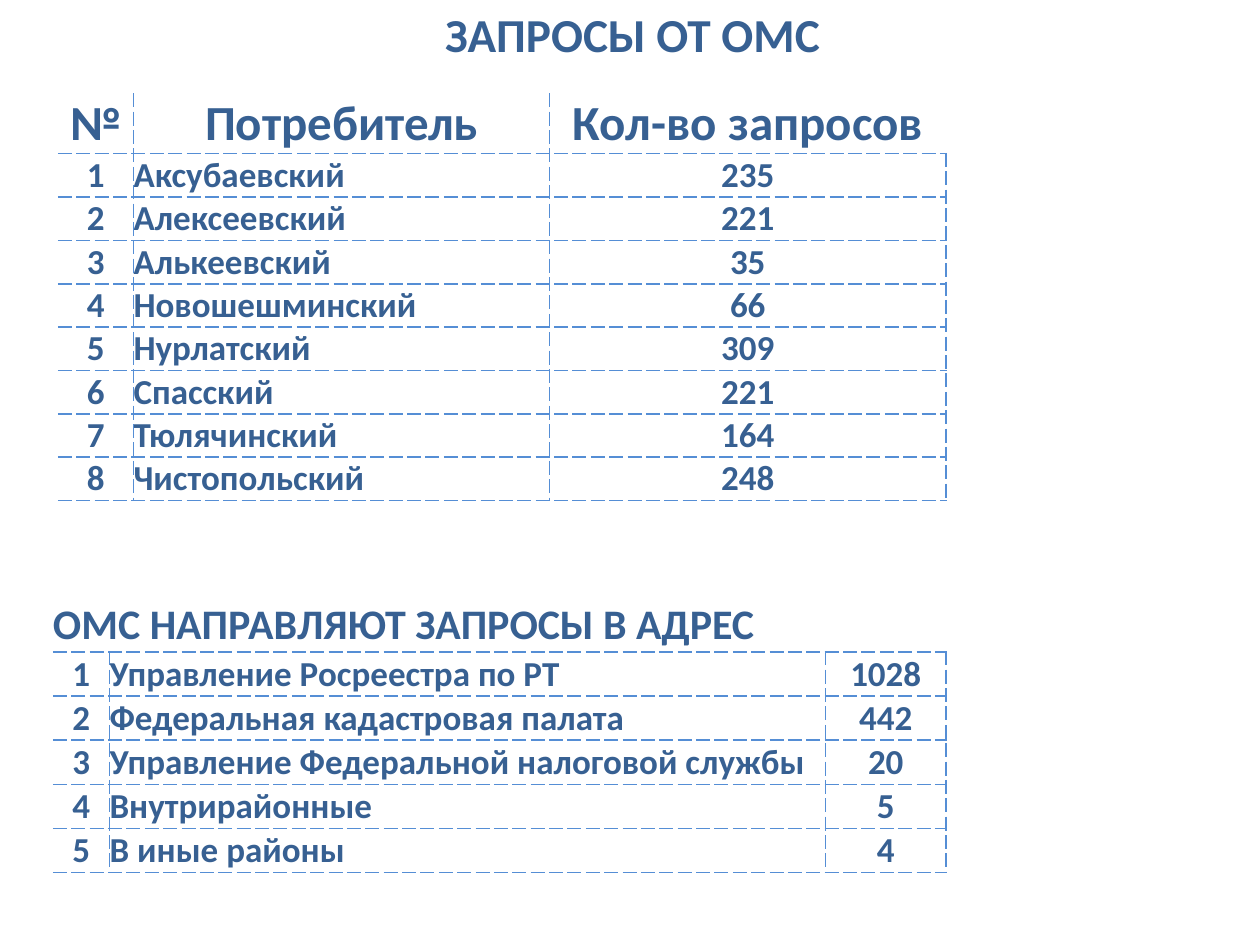
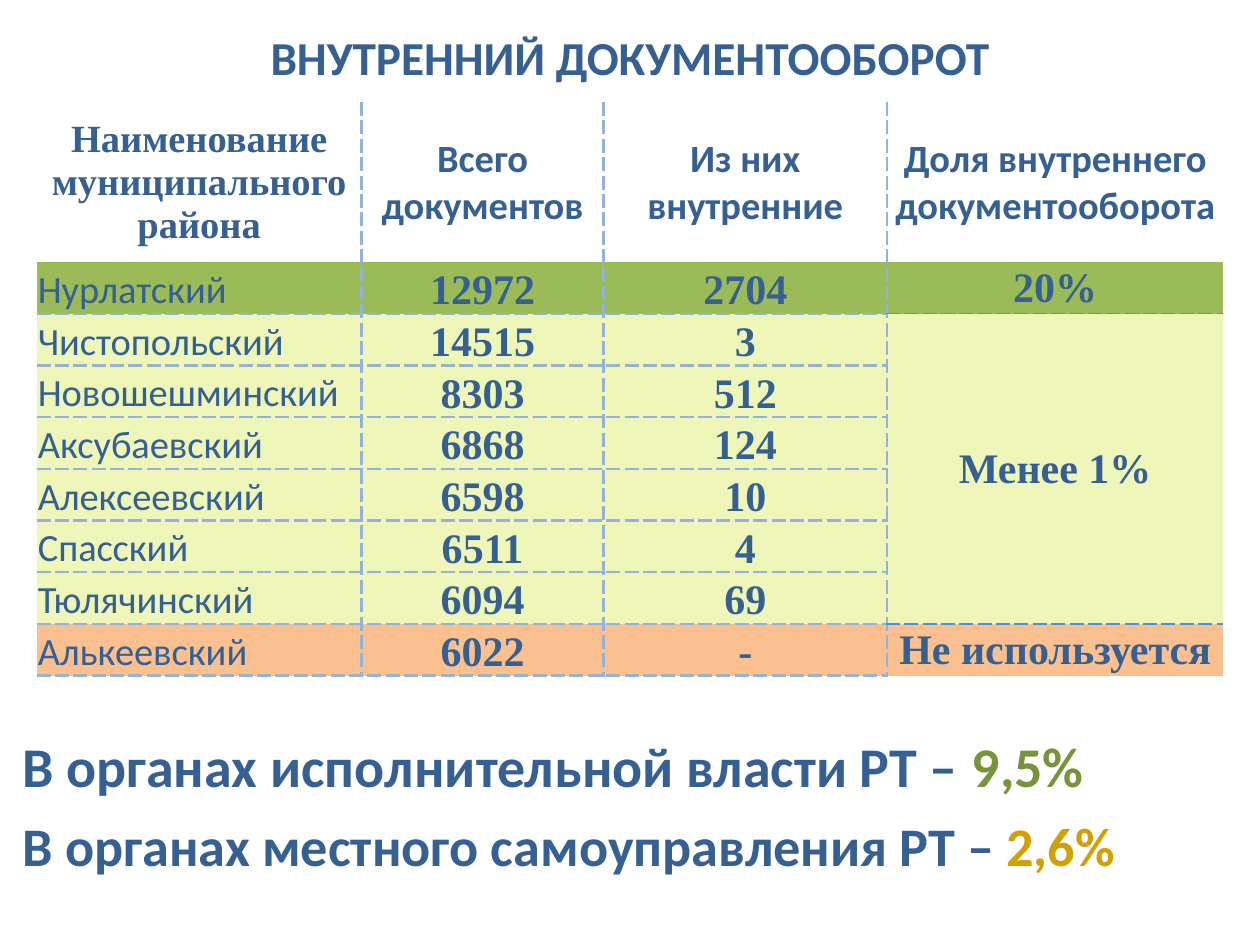
from dataclasses import dataclass

from lxml import etree
from pptx import Presentation
from pptx.dml.color import RGBColor
from pptx.enum.text import MSO_ANCHOR, MSO_AUTO_SIZE, PP_ALIGN
from pptx.oxml.ns import qn
from pptx.util import Inches, Pt

LEFT, CENTER, JUSTIFY = PP_ALIGN.LEFT, PP_ALIGN.CENTER, PP_ALIGN.JUSTIFY
TOP, MIDDLE, BOTTOM = MSO_ANCHOR.TOP, MSO_ANCHOR.MIDDLE, MSO_ANCHOR.BOTTOM
NO_AUTOFIT = MSO_AUTO_SIZE.NONE


@dataclass(frozen=True)
class Theme:
    sans: str = "Calibri"
    serif: str = "Times New Roman"
    text: str = "376092"
    name: str = "366092"
    line: str = "558ED5"
    soft_line: str = "95B3D7"
    white: str = "FFFFFF"
    high: str = "9BBB59"
    low: str = "EEF7B9"
    unused: str = "FAC090"
    green: str = "77933C"
    gold: str = "D2A000"
    title_size: int = 27
    header_size: int = 28
    subtitle_size: int = 24
    row_size: int = 20
    label_size: int = 22
    figure_size: int = 24


theme = Theme()


def add_run(paragraph, text, size, color=theme.text, font=theme.sans, bold=True):
    run = paragraph.add_run()
    run.text = text
    run.font.size = Pt(size)
    run.font.name = font
    run.font.bold = bold
    run.font.color.rgb = RGBColor.from_string(color)


def format_cell(cell, align, anchor, inset, fill, borders):
    cell.vertical_anchor = anchor
    cell.margin_left = cell.margin_right = cell.margin_top = Inches(inset)
    cell.margin_bottom = 0
    cell.text_frame.paragraphs[0].alignment = align
    if fill:
        cell.fill.solid()
        cell.fill.fore_color.rgb = RGBColor.from_string(fill)
    else:
        cell.fill.background()
    properties = cell._tc.get_or_add_tcPr()
    for index, side in enumerate("LRTB"):
        line = etree.Element(qn(f"a:ln{side}"))
        properties.insert(index, line)
        if side in borders:
            color, width, dash = borders[side]
            line.set("w", str(Pt(width)))
            solid = etree.SubElement(line, qn("a:solidFill"))
            etree.SubElement(solid, qn("a:srgbClr"), val=color)
            etree.SubElement(line, qn("a:prstDash"), val=dash)
        else:
            etree.SubElement(line, qn("a:noFill"))


presentation = Presentation()
presentation.slide_width = Inches(10)
presentation.slide_height = Inches(7.5)
column_unit = presentation.slide_width / 100
row_unit = presentation.slide_height / 100

slides = []
for title_text, title_left, title_top in [
    ("ЗАПРОСЫ ОТ ОМС", 0.2, -0.13),
    ("ВНУТРЕННИЙ ДОКУМЕНТООБОРОТ", 0, 2.27),
]:
    slide = presentation.slides.add_slide(presentation.slide_layouts[5])
    title = slide.shapes.title
    title.left, title.top = int(title_left * column_unit), int(title_top * row_unit)
    title.width, title.height = presentation.slide_width, int(7.47 * row_unit)
    title.text_frame.auto_size = NO_AUTOFIT
    title.text_frame.vertical_anchor = TOP
    paragraph = title.text_frame.paragraphs[0]
    paragraph.alignment = CENTER
    add_run(paragraph, title_text, theme.title_size)
    slides.append(slide)
requests_slide, documents_slide = slides

districts = [
    ("Аксубаевский", "235"),
    ("Алексеевский", "221"),
    ("Алькеевский", "35"),
    ("Новошешминский", "66"),
    ("Нурлатский", "309"),
    ("Спасский", "221"),
    ("Тюлячинский", "164"),
    ("Чистопольский", "248"),
]
recipients = [
    ("Управление Росреестра по РТ", "1028"),
    ("Федеральная кадастровая палата", "442"),
    ("Управление Федеральной налоговой службы", "20"),
    ("Внутрирайонные", "5"),
    ("В иные районы", "4"),
]
request_line = (theme.line, 1, "sysDash")
body_sides = ["RTB", "LRTB", "LRTB"]

for header, entries, left, top, widths, header_height, row_height, header_sides, header_size, name_align in [
    (("№", "Потребитель", "Кол-во запросов"), districts, 4.6, 9.87, (6, 33, 31.5),
     6.4, 4.59, ["RB", "LRB", "LB"], theme.header_size, JUSTIFY),
    (("ОМС НАПРАВЛЯЮТ ЗАПРОСЫ В АДРЕС", "", ""), recipients, 4.2, 63.33, (4.5, 56.8, 9.6),
     5.67, 4.67, ["B", "B", "B"], theme.subtitle_size, LEFT),
]:
    heights = [header_height] + [row_height] * len(entries)
    table = requests_slide.shapes.add_table(
        len(heights), len(widths), int(left * column_unit), int(top * row_unit),
        int(sum(widths) * column_unit), int(sum(heights) * row_unit)).table
    for column, width in zip(table.columns, widths):
        column.width = int(width * column_unit)
    for row, height in zip(table.rows, heights):
        row.height = int(height * row_unit)
    spanning = not header[1]
    if spanning:
        table.cell(0, 0).merge(table.cell(0, 2))
    rows = [header] + [(str(number), *entry) for number, entry in enumerate(entries, 1)]
    for row_index, texts in enumerate(rows):
        for column_index, text in enumerate(texts):
            is_header = row_index == 0
            cell = table.cell(row_index, column_index)
            align = CENTER
            if is_header and spanning:
                align = LEFT
            elif column_index == 1 and not is_header:
                align = name_align
            sides = (header_sides if is_header else body_sides)[column_index]
            format_cell(cell, align, MIDDLE, 0, None, {side: request_line for side in sides})
            if text:
                size = header_size if is_header else theme.row_size
                add_run(cell.text_frame.paragraphs[0], text, size)

document_rows = [
    ("Наименование муниципального района", "Всего документов", "Из них внутренние",
     "Доля внутреннего документооборота"),
    ("Нурлатский", "12972", "2704", "20%"),
    ("Чистопольский", "14515", "3", "Менее 1%"),
    ("Новошешминский", "8303", "512", ""),
    ("Аксубаевский", "6868", "124", ""),
    ("Алексеевский", "6598", "10", ""),
    ("Спасский", "6511", "4", ""),
    ("Тюлячинский", "6094", "69", ""),
    ("Алькеевский", "6022", "-", "Не используется"),
]
row_fills = [theme.white, theme.high] + [theme.low] * 6 + [theme.unused]
document_widths = (25.8, 19.2, 22.5, 26.7)
document_heights = [16.93] + [5.47] * 8
document_line = (theme.soft_line, 1.5, "sysDash")
unused_line = (theme.line, 1, "dash")
last_row = len(document_rows) - 1

table = documents_slide.shapes.add_table(
    len(document_rows), len(document_widths), int(2.9 * column_unit), int(10.8 * row_unit),
    int(sum(document_widths) * column_unit), int(sum(document_heights) * row_unit)).table
for column, width in zip(table.columns, document_widths):
    column.width = int(width * column_unit)
for row, height in zip(table.rows, document_heights):
    row.height = int(height * row_unit)
table.cell(2, 3).merge(table.cell(last_row - 1, 3))

for row_index, (texts, fill) in enumerate(zip(document_rows, row_fills)):
    for column_index, text in enumerate(texts):
        is_header = row_index == 0
        is_name = column_index == 0
        is_share = column_index == 3
        borders = {}
        if not is_name:
            borders["L"] = document_line
        if not is_share:
            borders["R"] = document_line
        if row_index > 1:
            borders["T"] = request_line if is_share else document_line
        if row_index > 0:
            borders["B"] = request_line if is_share else document_line
        if is_share and row_index == last_row:
            borders["T"] = unused_line
            del borders["B"]
        elif is_share and row_index > 1:
            borders["B"] = unused_line
        cell = table.cell(row_index, column_index)
        align = LEFT if is_name and not is_header else CENTER
        anchor = MIDDLE if is_header or is_share else BOTTOM
        format_cell(cell, align, anchor, 0.01, fill, borders)
        paragraph = cell.text_frame.paragraphs[0]
        if is_header:
            font = theme.serif if is_name else theme.sans
            add_run(paragraph, text, theme.label_size, font=font)
        elif is_name:
            add_run(paragraph, text, theme.label_size, theme.name, bold=False)
        elif text:
            add_run(paragraph, text, theme.figure_size, font=theme.serif)

for label, share, color, size, top, width in [
    ("В органах исполнительной власти РТ – ", "9,5%", theme.green, 32, 76.8, 99.2),
    ("В органах местного самоуправления РТ – ", "2,6%", theme.gold, 31, 85.33, 90),
]:
    summary = documents_slide.shapes.add_textbox(
        int(0.8 * column_unit), int(top * row_unit), int(width * column_unit), int(8.4 * row_unit))
    summary.text_frame.word_wrap = True
    paragraph = summary.text_frame.paragraphs[0]
    add_run(paragraph, label, size)
    add_run(paragraph, share, size, color)

presentation.save("out.pptx")
